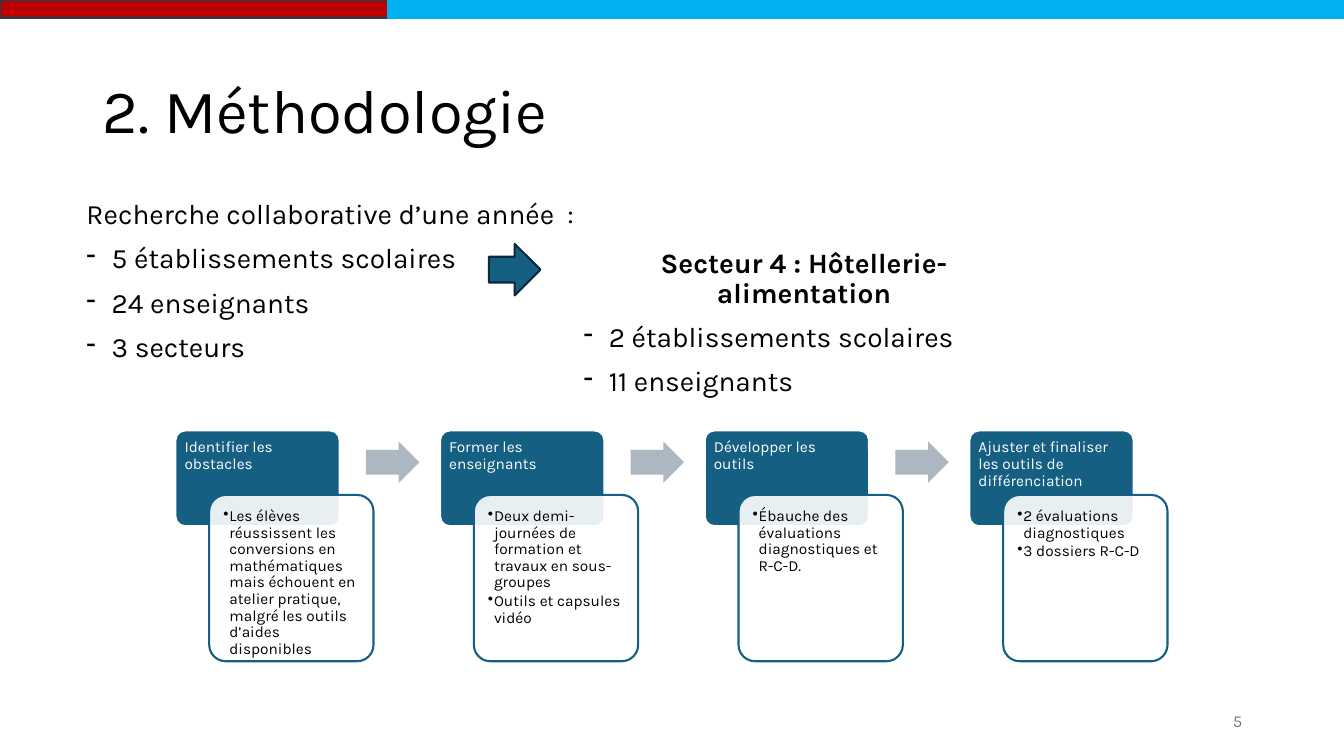
"""Builds the methodology slide: project scope, chosen sector and a four-step process."""
from lxml import etree
from pptx import Presentation
from pptx import util as u
from pptx.dml.color import RGBColor
from pptx.enum import shapes, text
from pptx.oxml.ns import qn

TITLE = "2. Méthodologie"
PAGE_NUMBER = "5"
SCOPE = ("Recherche collaborative d’une année  :",
         ["5 établissements scolaires", "24 enseignants", "3 secteurs"])
SECTOR = ("Secteur 4 : Hôtellerie-alimentation",
          ["2 établissements scolaires", "11 enseignants"])
STEPS = [
    ("Identifier les obstacles",
     ["Les élèves réussissent les conversions en mathématiques mais échouent "
      "en atelier pratique, malgré les outils d’aides disponibles"]),
    ("Former les enseignants",
     ["Deux demi-journées de formation et travaux en sous-groupes",
      "Outils et capsules vidéo"]),
    ("Développer les outils",
     ["Ébauche des évaluations diagnostiques et R-C-D."]),
    ("Ajuster et finaliser les outils de différenciation",
     ["2 évaluations diagnostiques", "3 dossiers R-C-D"]),
]
WIDTH, HEIGHT = 13.33, 7.5
BAND_SPLIT, BAND_HEIGHT = 3.85, 0.18
STEP_LEFT, STEP_TOP, STEP_PITCH = 1.74, 4.27, 2.625
CARD_WIDTH = 1.63
TEAL, WHITE, BLACK = "156082", "FFFFFF", "000000"
LEFT, CENTER, RIGHT = text.PP_ALIGN.LEFT, text.PP_ALIGN.CENTER, text.PP_ALIGN.RIGHT
KINDS = shapes.MSO_SHAPE
HEADING = dict(size=20, before=10)
LISTED = dict(HEADING, bullet="-", indent=0.25)
CAPTION = dict(size=11, color=WHITE, after=3.85)
DETAIL = dict(size=11, after=1.65, bullet="•", indent=0.06)


def rgb(code):
    return RGBColor.from_string(code)


def inches(*values):
    return [u.Inches(value) for value in values]


def add_figure(page, kind, area, fill, line=None, adjust=(), alpha=None):
    figure = page.shapes.add_shape(kind, *inches(*area))
    figure.shadow.inherit = False
    for index, value in enumerate(adjust):
        figure.adjustments[index] = value
    figure.fill.solid()
    figure.fill.fore_color.rgb = rgb(fill)
    if alpha:
        color = figure.fill._xPr.find(qn("a:solidFill"))[0]
        etree.SubElement(color, qn("a:alpha")).set("val", str(alpha * 1000))
    if line:
        figure.line.color.rgb = rgb(line)
        figure.line.width = u.Pt(1.5)
    else:
        figure.line.fill.background()


def write(box, items, insets=(0.1, 0.05, 0.1, 0.05), anchor=text.MSO_ANCHOR.TOP):
    frame = box.text_frame
    settings = dict(word_wrap=True, auto_size=text.MSO_AUTO_SIZE.NONE, vertical_anchor=anchor)
    sides = ("margin_left", "margin_top", "margin_right", "margin_bottom")
    settings.update(zip(sides, inches(*insets)))
    for name, value in settings.items():
        setattr(frame, name, value)
    for index, (words, look) in enumerate(items):
        para = frame.paragraphs[0] if index == 0 else frame.add_paragraph()
        spacing = dict(alignment=look.get("align", LEFT), line_spacing=look.get("lines", 0.9),
                       space_before=u.Pt(look.get("before", 0)),
                       space_after=u.Pt(look.get("after", 0)))
        for name, value in spacing.items():
            setattr(para, name, value)
        if "bullet" in look:
            props = para._p.get_or_add_pPr()
            props.set("marL", str(u.Inches(look["indent"])))
            props.set("indent", str(-u.Inches(look["indent"])))
            etree.SubElement(props, qn("a:buChar")).set("char", look["bullet"])
        span = para.add_run()
        span.text = words
        font = dict(name="Karla", size=u.Pt(look["size"]), bold=look.get("bold", False))
        for name, value in font.items():
            setattr(span.font, name, value)
        span.font.color.rgb = rgb(look.get("color", BLACK))


def add_text(page, area, items, **options):
    write(page.shapes.add_textbox(*inches(*area)), items, **options)


def add_list(page, area, content, **heading):
    head, lines = content
    add_text(page, area, [(head, dict(HEADING, **heading))] + [(line, LISTED) for line in lines])


def add_step(page, index, caption, details):
    left = STEP_LEFT + index * STEP_PITCH
    card_left, card_top = left + 0.335, STEP_TOP + 0.64
    add_figure(page, KINDS.ROUNDED_RECTANGLE, (left, STEP_TOP, CARD_WIDTH, 0.95),
               TEAL, WHITE, [0.1])
    add_text(page, (left, STEP_TOP, CARD_WIDTH, 0.64), [(caption, CAPTION)],
             insets=(0.09, 0.09, 0.09, 0.05))
    add_figure(page, KINDS.ROUNDED_RECTANGLE, (card_left, card_top, CARD_WIDTH, 1.65),
               WHITE, TEAL, [0.1], alpha=90)
    add_text(page, (card_left + 0.05, card_top + 0.04, 1.54, 1.55),
             [(detail, DETAIL) for detail in details], insets=[0.09] * 4)
    if index < len(STEPS) - 1:
        add_figure(page, KINDS.RIGHT_ARROW, (left + 1.89, STEP_TOP + 0.11, 0.53, 0.41),
                   "ACB7C1", adjust=[0.6, 0.5])


def main():
    deck = Presentation()
    deck.slide_width, deck.slide_height = inches(WIDTH, HEIGHT)
    page = deck.slides.add_slide(deck.slide_layouts[5])
    title = page.shapes.title
    title.left, title.top, title.width, title.height = inches(0.92, 0.4, 11.5, 1.45)
    write(title, [(TITLE, dict(size=44))], anchor=text.MSO_ANCHOR.MIDDLE)
    add_list(page, (0.76, 1.94, 5.07, 1.93), SCOPE)
    add_text(page, (9.42, 6.95, 3, 0.4),
             [(PAGE_NUMBER, dict(size=12, color="797979", align=RIGHT, lines=1.0))],
             anchor=text.MSO_ANCHOR.MIDDLE)
    add_figure(page, KINDS.RECTANGLE, (0, 0, BAND_SPLIT, BAND_HEIGHT), "C00000", "104760")
    add_figure(page, KINDS.RECTANGLE, (BAND_SPLIT, 0, WIDTH - BAND_SPLIT, BAND_HEIGHT),
               "00B0F0", "00B0F0")
    add_list(page, (5.69, 2.42, 4.57, 1.45), SECTOR, bold=True, align=CENTER)
    for index, (caption, details) in enumerate(STEPS):
        add_step(page, index, caption, details)
    add_figure(page, KINDS.RIGHT_ARROW, (4.85, 2.42, 0.51, 0.51), TEAL, "092A39")
    deck.save("out.pptx")


if __name__ == "__main__":
    main()
